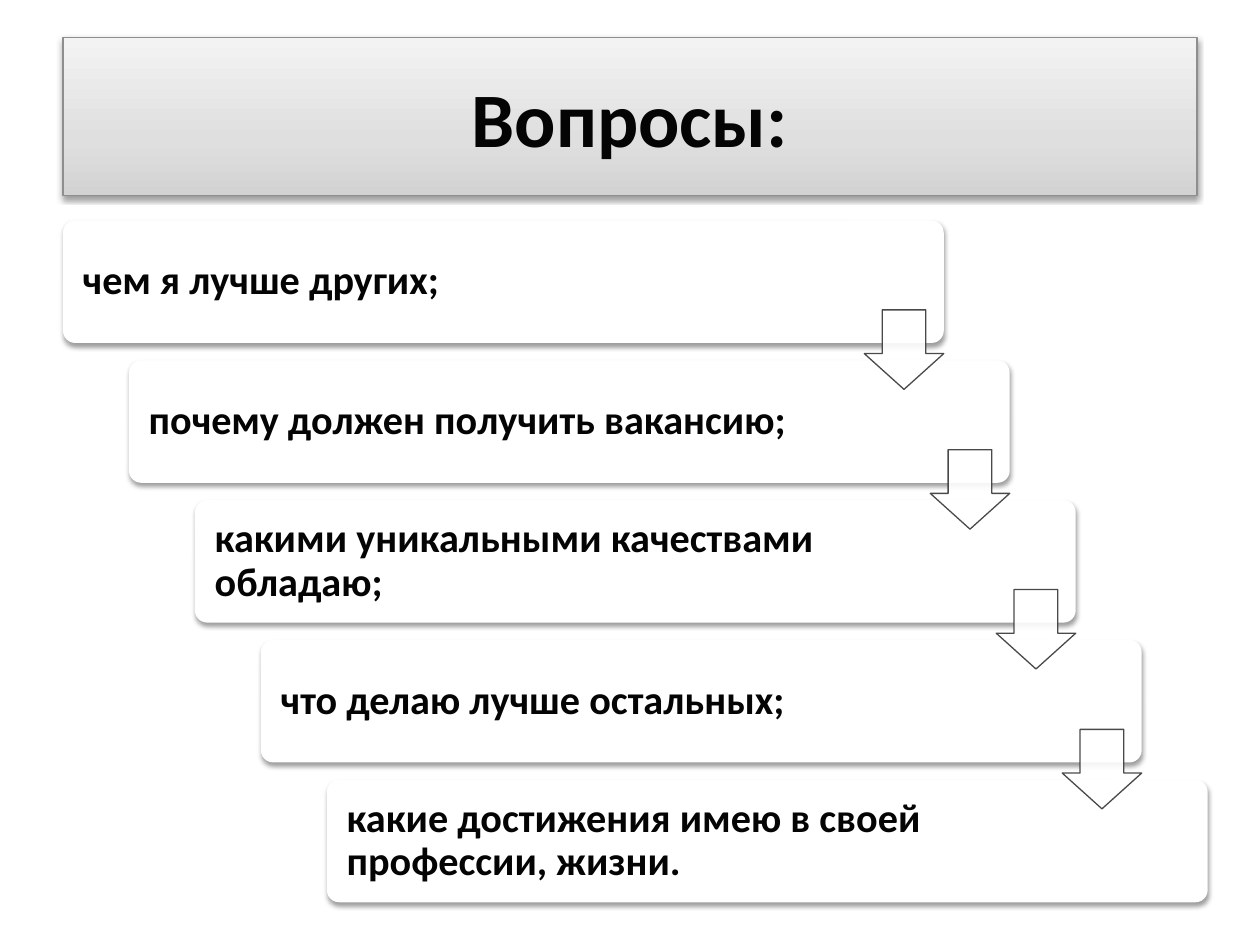
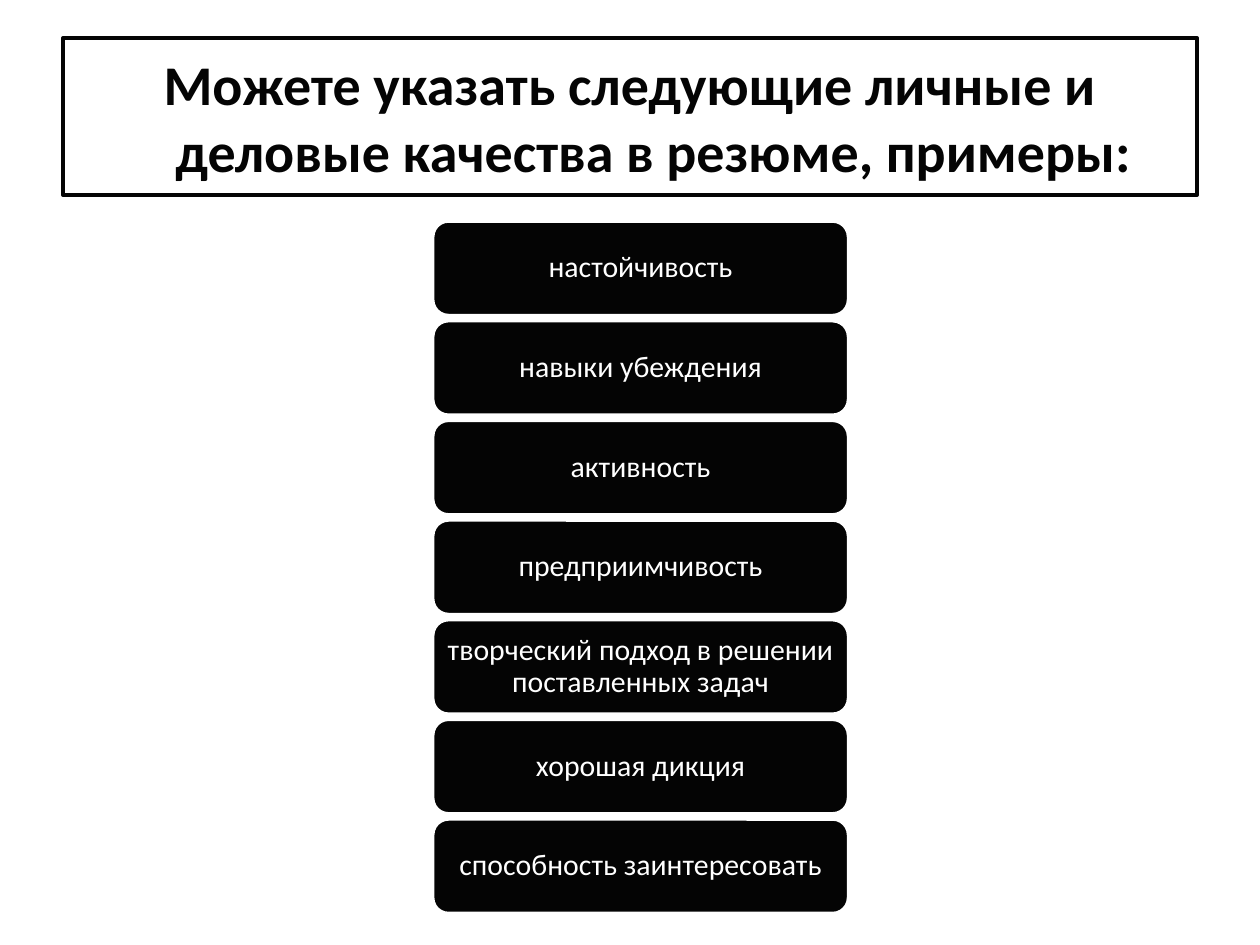
from copy import deepcopy
from lxml import etree
from pptx import Presentation
from pptx.dml.color import RGBColor
from pptx.enum.shapes import MSO_SHAPE
from pptx.enum.text import MSO_ANCHOR, PP_ALIGN
from pptx.oxml.ns import qn
from pptx.util import Pt

ROUND, ARROW = MSO_SHAPE.ROUNDED_RECTANGLE, MSO_SHAPE.DOWN_ARROW
LEFT, CENTER, MIDDLE = PP_ALIGN.LEFT, PP_ALIGN.CENTER, MSO_ANCHOR.MIDDLE
BLACK, WHITE, GREY, DARK = "040404", "FFFFFF", "8E8E8E", "363636"
TITLE_BOX = [Pt(v) for v in (36, 21.6, 648, 90)]
TITLE_GRADIENT = [(0, "D2D2D2"), (0.35, "DFDFDF"), (1, "F3F3F3")]

QUESTIONS = [
    "чем я лучше других;",
    "почему должен получить вакансию;",
    "какими уникальными качествами обладаю;",
    "что делаю лучше остальных;",
    "какие достижения имею в своей профессии, жизни.",
]
QUALITIES = [
    "настойчивость",
    "навыки убеждения",
    "активность",
    "предприимчивость",
    "творческий подход в решении поставленных задач",
    "хорошая дикция",
    "способность заинтересовать",
]


def paint(sp, fill, line=None, width=0):
    sp.shadow.inherit = False
    sp.fill.solid()
    sp.fill.fore_color.rgb = RGBColor.from_string(fill)
    if line:
        sp.line.color.rgb = RGBColor.from_string(line)
        sp.line.width = Pt(width)
    else:
        sp.line.fill.background()


def write(sp, text, size, color, bold, align, margins, spacing):
    tf = sp.text_frame
    frame = dict(word_wrap=True, vertical_anchor=MIDDLE)
    frame.update(zip(("margin_left", "margin_top", "margin_right", "margin_bottom"), map(Pt, margins)))
    for name, value in frame.items():
        setattr(tf, name, value)
    p = tf.paragraphs[0]
    p.alignment, p.line_spacing = align, spacing
    r = p.add_run()
    r.text = text
    for name, value in dict(name="Calibri", size=Pt(size), bold=bold).items():
        setattr(r.font, name, value)
    r.font.color.rgb = RGBColor.from_string(color)


prs = Presentation()
prs.slide_width, prs.slide_height = Pt(720), Pt(540)

titles = []
for text, size, line, width in [
    ("Вопросы:", 44, GREY, 0.75),
    ("Можете указать следующие личные и деловые качества в резюме, примеры:", 32, BLACK, 2),
]:
    s = prs.slides.add_slide(prs.slide_layouts[5])
    title = s.shapes.title
    title.left, title.top, title.width, title.height = TITLE_BOX
    paint(title, WHITE, line, width)
    write(title, text, size, BLACK, True, CENTER, (7.2, 3.6, 7.2, 3.6), 1.0)
    titles.append(title)

title = titles[0]
title.fill.gradient()
title.fill.gradient_angle = 90
stops = title._element.spPr.find(qn("a:gradFill")).find(qn("a:gsLst"))
stops.insert(1, deepcopy(stops[0]))
for stop, (position, color) in zip(title.fill.gradient_stops, TITLE_GRADIENT):
    stop.position = position
    stop.color.rgb = RGBColor.from_string(color)

pPr = titles[1].text_frame.paragraphs[0]._p.get_or_add_pPr()
pPr.set("marL", str(Pt(27)))
pPr.set("indent", str(-Pt(27)))

shapes = prs.slides[0].shapes
shadowed = [title]
for i, question in enumerate(QUESTIONS):
    sp = shapes.add_shape(ROUND, Pt(36 + 37.7 * i), Pt(126 + 79.9 * i), Pt(503.3), Pt(70))
    sp.adjustments[0] = 0.1
    paint(sp, WHITE)
    write(sp, question, 23, BLACK, True, LEFT, (9.2, 7.2, 92, 7.2), 0.9)
    shadowed.append(sp)

for i in range(len(QUESTIONS) - 1):
    sp = shapes.add_shape(ARROW, Pt(493.9 + 37.7 * i), Pt(177.1 + 79.9 * i), Pt(45.4), Pt(45.4))
    sp.adjustments[0], sp.adjustments[1] = 0.55, 0.45
    paint(sp, WHITE, DARK, 0.75)
    for color in sp._element.spPr.iter(qn("a:srgbClr")):
        etree.SubElement(color, qn("a:alpha"), val="90000")

for sp in shadowed:
    effects = sp._element.spPr.find(qn("a:effectLst"))
    shadow = etree.SubElement(effects, qn("a:outerShdw"), blurRad=str(Pt(3.1)),
                              dist=str(Pt(1.6)), dir="5400000", rotWithShape="0")
    color = etree.SubElement(shadow, qn("a:srgbClr"), val="000000")
    etree.SubElement(color, qn("a:alpha"), val="38000")

shapes = prs.slides[1].shapes
for i, quality in enumerate(QUALITIES):
    sp = shapes.add_shape(ROUND, Pt(247.3), Pt(126.3 + 56.95 * i), Pt(237.6), Pt(54))
    paint(sp, BLACK, WHITE, 2)
    write(sp, quality, 17, WHITE, False, CENTER, (5, 5, 5, 5), 0.9)

prs.save("out.pptx")
